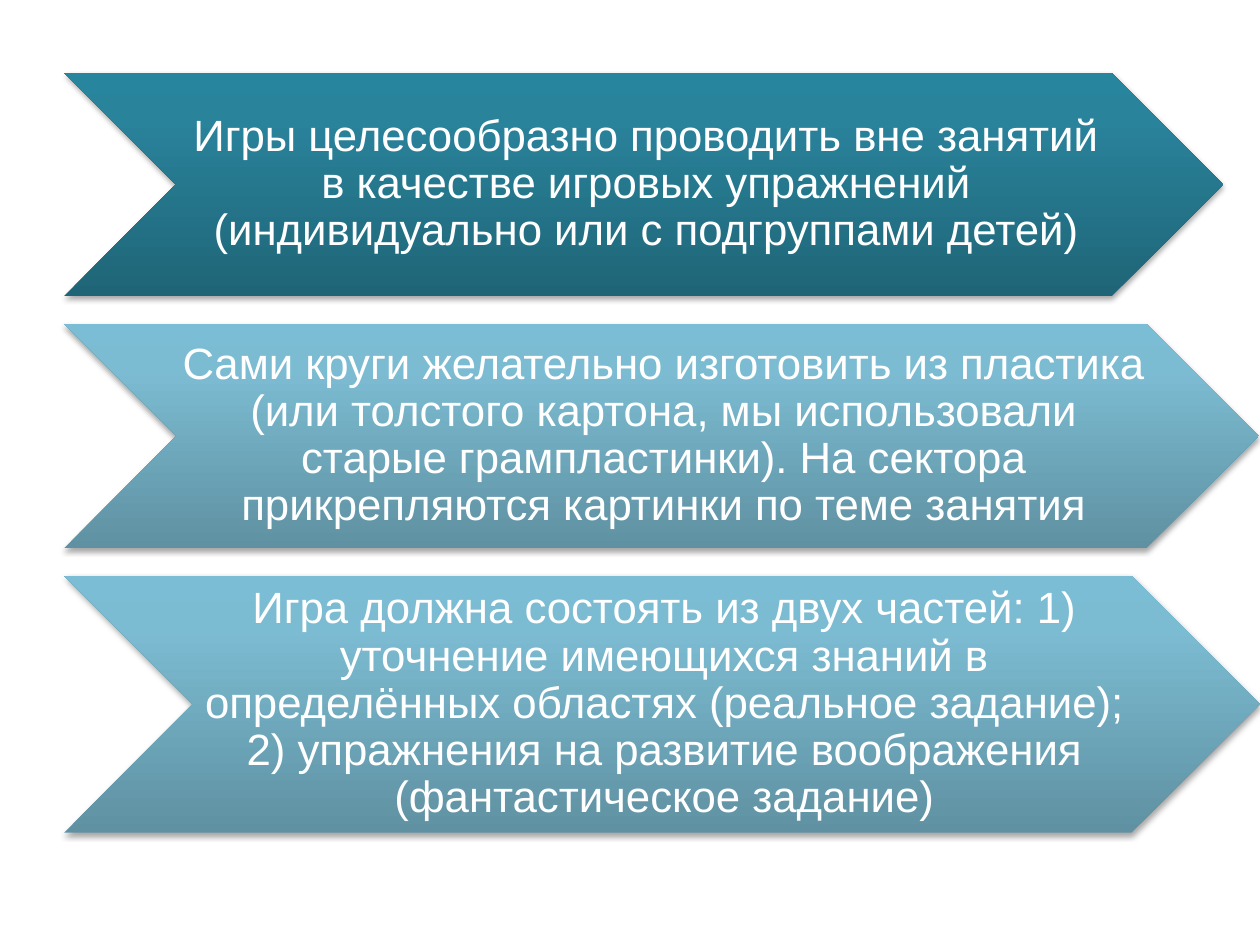
from lxml import etree
from pptx import Presentation
from pptx.dml.color import RGBColor
from pptx.enum.shapes import MSO_SHAPE
from pptx.enum.text import MSO_ANCHOR, PP_ALIGN
from pptx.oxml import parse_xml
from pptx.util import Pt

CHEVRON = MSO_SHAPE.CHEVRON
MIDDLE = MSO_ANCHOR.MIDDLE
CENTER = PP_ALIGN.CENTER
DRAWING = "http://schemas.openxmlformats.org/drawingml/2006/main"

THEME = {
    "font": "Arial",
    "size": Pt(25),
    "text": RGBColor.from_string("FFFFFF"),
    "dark": ("1F6577", "29839B", "27859E"),
    "light": ("5F91A2", "7CBCD2", "7BBDD5"),
    "shadow": "000000",
}
STOPS = (0, 80, 100)
LEFT = 36.7
TOP = 41.8
GAP = 15.8

ARROWS = [
    (662.4, 127.4, "dark",
     "Игры целесообразно проводить вне занятий в качестве игровых упражнений "
     "(индивидуально или с подгруппами детей)"),
    (682.6, 128.2, "light",
     "Сами круги желательно изготовить из пластика (или толстого картона, "
     "мы использовали старые грампластинки). На сектора прикрепляются "
     "картинки по теме занятия"),
    (683.3, 146.9, "light",
     "Игра должна состоять из двух частей: 1) уточнение имеющихся знаний в "
     "определённых областях (реальное задание); 2) упражнения на развитие "
     "воображения (фантастическое задание)"),
]


def set_gradient(shape, colors):
    shape.fill.gradient()
    gradient = shape._element.spPr.find(f"{{{DRAWING}}}gradFill")
    stops = gradient.find(f"{{{DRAWING}}}gsLst")
    for stop in list(stops):
        stops.remove(stop)
    for position, color in zip(STOPS, colors):
        stop = etree.SubElement(stops, f"{{{DRAWING}}}gs", pos=str(position * 1000))
        etree.SubElement(stop, f"{{{DRAWING}}}srgbClr", val=color)
    gradient.find(f"{{{DRAWING}}}lin").set("ang", str(270 * 60000))


def set_shadow(shape):
    shape.shadow.inherit = False
    effects = shape._element.spPr.find(f"{{{DRAWING}}}effectLst")
    effects.append(parse_xml(
        f'<a:outerShdw xmlns:a="{DRAWING}" blurRad="{Pt(3.1)}" dist="{Pt(1.8)}" '
        f'dir="5400000" rotWithShape="0"><a:srgbClr val="{THEME["shadow"]}">'
        '<a:alpha val="35000"/></a:srgbClr></a:outerShdw>'))


deck = Presentation()
deck.slide_width, deck.slide_height = Pt(720), Pt(540)
page = deck.slides.add_slide(deck.slide_layouts[6])

frame_format = {
    "word_wrap": True, "vertical_anchor": MIDDLE,
    "margin_left": Pt(2.2), "margin_top": Pt(1.4),
    "margin_right": 0, "margin_bottom": Pt(1.4),
}
para_format = {"alignment": CENTER, "line_spacing": 0.9, "space_after": Pt(8.75)}
font_format = {"name": THEME["font"], "size": THEME["size"]}

top = TOP
for width, height, tone, text in ARROWS:
    arrow = page.shapes.add_shape(CHEVRON, Pt(LEFT), Pt(top), Pt(width), Pt(height))
    set_gradient(arrow, THEME[tone])
    arrow.line.fill.background()
    set_shadow(arrow)

    box = page.shapes.add_textbox(
        Pt(LEFT + height / 2), Pt(top), Pt(width - height), Pt(height))
    for name, value in frame_format.items():
        setattr(box.text_frame, name, value)
    para = box.text_frame.paragraphs[0]
    for name, value in para_format.items():
        setattr(para, name, value)
    span = para.add_run()
    span.text = text
    for name, value in font_format.items():
        setattr(span.font, name, value)
    span.font.color.rgb = THEME["text"]
    top += height + GAP

deck.save("out.pptx")
